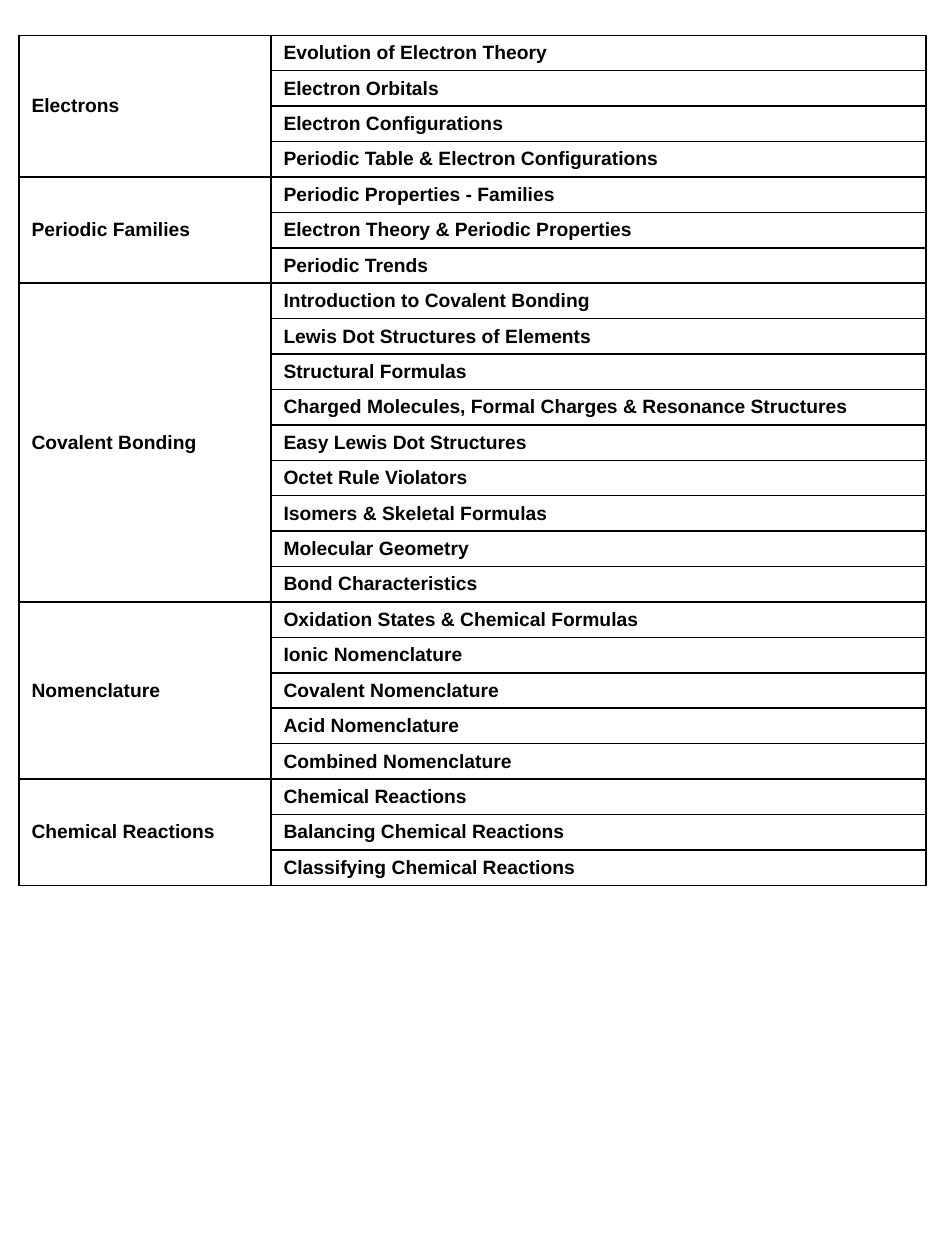
from dataclasses import dataclass

from lxml import etree
from pptx import Presentation
from pptx.dml.color import RGBColor
from pptx.enum.text import MSO_ANCHOR
from pptx.oxml.ns import qn
from pptx.table import Table, _Cell
from pptx.util import Inches, Pt

MIDDLE = MSO_ANCHOR.MIDDLE


@dataclass(frozen=True)
class Theme:
    font: str = "Arial"
    size: float = 11
    ink: str = "000000"
    rule: float = 1


@dataclass(frozen=True)
class Unit:
    name: str
    topics: tuple[str, ...]


THEME = Theme()
LEFT, TOP = 0.15, 0.28
WIDTHS = (2, 5.2)
HEIGHT = 6.75

UNITS = (
    Unit("Electrons", (
        "Evolution of Electron Theory",
        "Electron Orbitals",
        "Electron Configurations",
        "Periodic Table & Electron Configurations",
    )),
    Unit("Periodic Families", (
        "Periodic Properties - Families",
        "Electron Theory & Periodic Properties",
        "Periodic Trends",
    )),
    Unit("Covalent Bonding", (
        "Introduction to Covalent Bonding",
        "Lewis Dot Structures of Elements",
        "Structural Formulas",
        "Charged Molecules, Formal Charges & Resonance Structures",
        "Easy Lewis Dot Structures",
        "Octet Rule Violators",
        "Isomers & Skeletal Formulas",
        "Molecular Geometry",
        "Bond Characteristics",
    )),
    Unit("Nomenclature", (
        "Oxidation States & Chemical Formulas",
        "Ionic Nomenclature",
        "Covalent Nomenclature",
        "Acid Nomenclature",
        "Combined Nomenclature",
    )),
    Unit("Chemical Reactions", (
        "Chemical Reactions",
        "Balancing Chemical Reactions",
        "Classifying Chemical Reactions",
    )),
)


def add_borders(cell: _Cell) -> None:
    props = cell._tc.get_or_add_tcPr()
    for side in ("a:lnL", "a:lnR", "a:lnT", "a:lnB"):
        line = etree.SubElement(props, qn(side), w=str(Pt(THEME.rule)))
        fill = etree.SubElement(line, qn("a:solidFill"))
        etree.SubElement(fill, qn("a:srgbClr"), val=THEME.ink)


def style_cell(cell: _Cell) -> None:
    add_borders(cell)
    cell.fill.background()
    cell.vertical_anchor = MIDDLE
    font = cell.text_frame.paragraphs[0].font
    font.name = THEME.font
    font.size = Pt(THEME.size)
    font.bold = True
    font.color.rgb = RGBColor.from_string(THEME.ink)


def fill_units(table: Table) -> None:
    """Write each unit's topics on the right and merge its name cell on the left."""
    row = 0
    for unit in UNITS:
        last = row + len(unit.topics) - 1
        head = table.cell(row, 0)
        head.text = unit.name
        head.merge(table.cell(last, 0))
        for step, topic in enumerate(unit.topics):
            table.cell(row + step, 1).text = topic
        row = last + 1


def main() -> None:
    deck = Presentation()
    deck.slide_width, deck.slide_height = Inches(7.5), Inches(10)
    slide = deck.slides.add_slide(deck.slide_layouts[6])
    count = sum(len(unit.topics) for unit in UNITS)
    table = slide.shapes.add_table(
        count, len(WIDTHS), Inches(LEFT), Inches(TOP),
        Inches(sum(WIDTHS)), Inches(HEIGHT),
    ).table
    table.first_row = table.horz_banding = False
    for column, width in zip(table.columns, WIDTHS):
        column.width = Inches(width)
    fill_units(table)
    for cell in table.iter_cells():
        style_cell(cell)
    deck.save("out.pptx")


if __name__ == "__main__":
    main()
